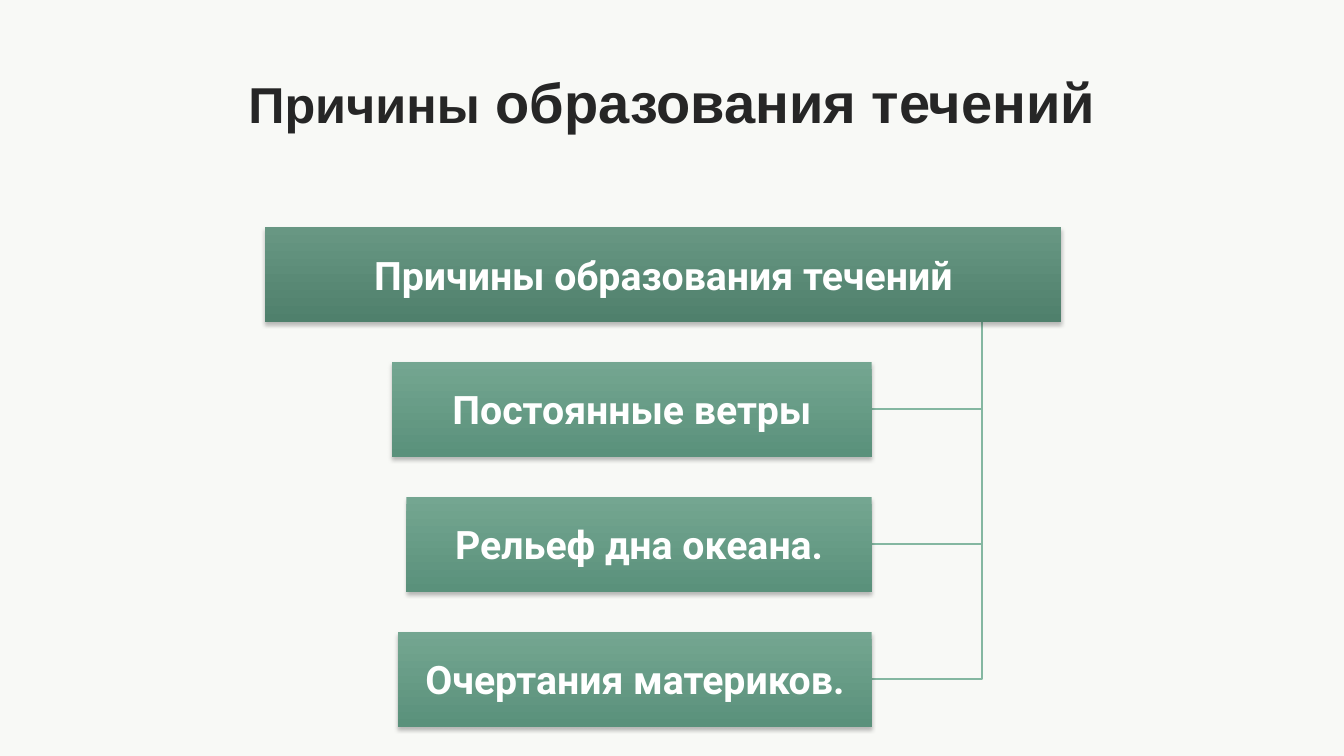
from lxml import etree
from pptx import Presentation
from pptx.dml.color import RGBColor
from pptx.enum.text import MSO_ANCHOR, PP_ALIGN
from pptx.oxml import parse_xml
from pptx.util import Cm, Pt

MIDDLE = MSO_ANCHOR.MIDDLE
CENTER = PP_ALIGN.CENTER

THEME = {
    "back": RGBColor.from_string("F8F9F6"),
    "ink": RGBColor.from_string("262626"),
    "white": RGBColor.from_string("FFFFFF"),
    "line": RGBColor.from_string("84B7A1"),
    "head": ("689783", "4F806C"),
    "item": ("74A691", "5A917B"),
    "small": Pt(36),
    "large": Pt(40),
    "label": Pt(28),
    "stroke": Pt(1.25),
}
SHADOW = (
    '<a:effectLst xmlns:a="http://schemas.openxmlformats.org/drawingml/2006/main">'
    '<a:outerShdw blurRad="38100" dist="25400" dir="5400000" rotWithShape="0">'
    '<a:srgbClr val="000000"><a:alpha val="25000"/></a:srgbClr>'
    '</a:outerShdw></a:effectLst>'
)
RECT = 1
TOP, STEP, HIGH = 5.72, 3.4, 2.39
RIGHT, SPINE = 21.97, 24.74


def style(para, font, size, color):
    para.alignment = CENTER
    para.font.name = font
    para.font.size = size
    para.font.bold = True
    para.font.color.rgb = color


def add_box(left, top, width, text, tones):
    box = slide.shapes.add_shape(RECT, Cm(left), Cm(top), Cm(width), Cm(HIGH))
    box.line.fill.background()
    box.fill.gradient()
    box.fill.gradient_angle = 270
    for stop, tone in zip(box.fill.gradient_stops, tones):
        stop.color.rgb = RGBColor.from_string(tone)
    box.element.spPr.append(parse_xml(SHADOW))
    frame = box.text_frame
    frame.word_wrap = True
    frame.vertical_anchor = MIDDLE
    frame.margin_left = frame.margin_right = Cm(0.05)
    frame.margin_top = frame.margin_bottom = Cm(0.05)
    frame.text = text
    style(frame.paragraphs[0], "Roboto", THEME["label"], THEME["white"])


deck = Presentation()
deck.slide_width, deck.slide_height = Cm(33.87), Cm(19.05)
slide = deck.slides.add_slide(deck.slide_layouts[6])
slide.background.fill.solid()
slide.background.fill.fore_color.rgb = THEME["back"]

title = slide.shapes.add_textbox(Cm(3.76), Cm(1.45), Cm(26.34), Cm(2.18))
frame = title.text_frame
frame.word_wrap = True
frame.vertical_anchor = MIDDLE
para = frame.paragraphs[0]
style(para, "Arial", THEME["large"], THEME["ink"])
for text, size in (("Причины", "small"), (" образования течений", "large")):
    run = para.add_run()
    run.text = text
    run.font.size = THEME[size]

items = [
    ("Постоянные ветры", 12.09),
    ("Рельеф дна океана.", 11.73),
    ("Очертания материков.", 11.94),
]
tops = [TOP + STEP * row for row in range(1, len(items) + 1)]

for top in reversed(tops):
    mid = Cm(top + HIGH / 2)
    path = slide.shapes.build_freeform(Cm(SPINE), Cm(TOP + HIGH))
    path.add_line_segments([(Cm(SPINE), mid), (Cm(RIGHT), mid)], close=False)
    link = path.convert_to_shape()
    link.fill.background()
    link.line.color.rgb = THEME["line"]
    link.line.width = THEME["stroke"]
    link.shadow.inherit = False

add_box(6.68, TOP, 20.07, "Причины образования течений", THEME["head"])
for top, (text, width) in zip(tops, items):
    add_box(RIGHT - width, top, width, text, THEME["item"])

deck.save("out.pptx")
